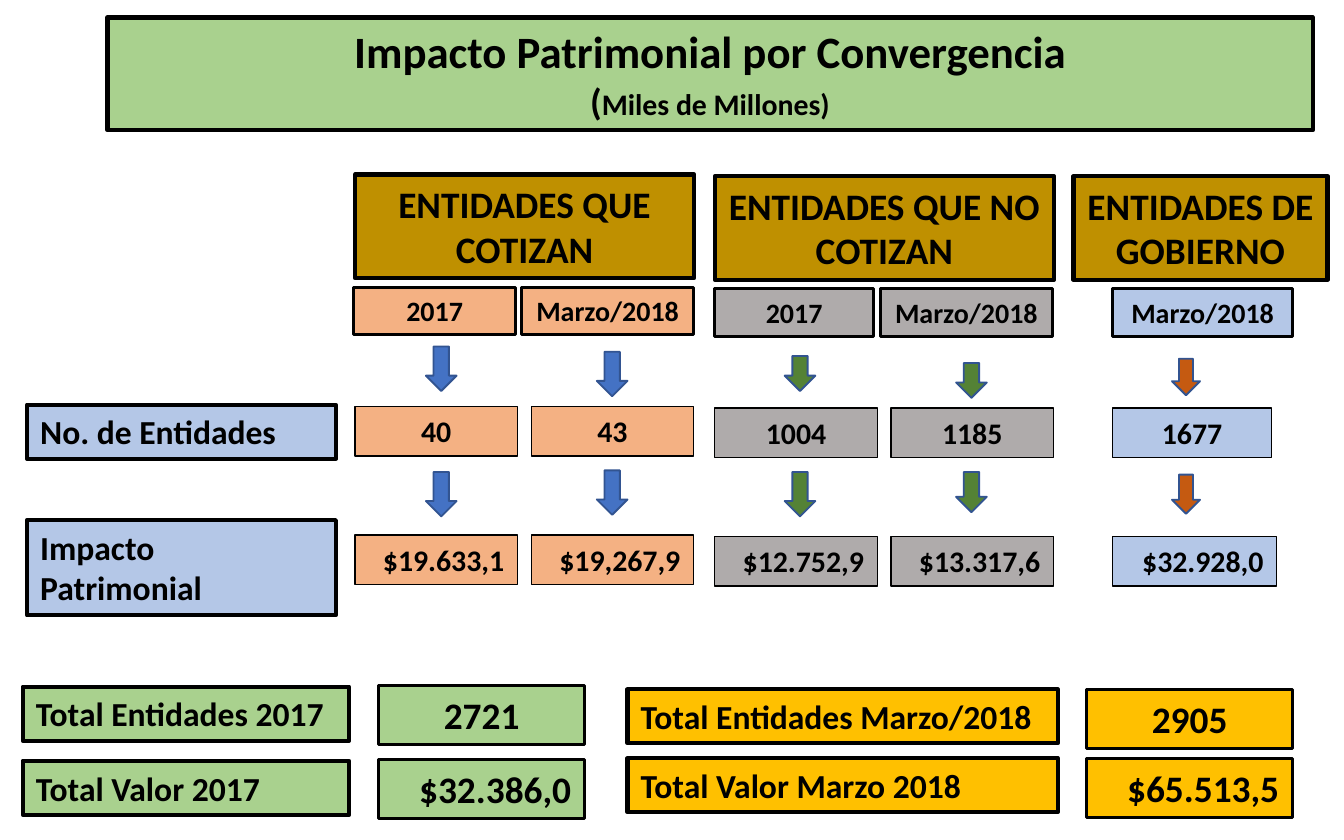
from dataclasses import dataclass

from pptx import Presentation
from pptx import util as u
from pptx.dml.color import RGBColor
from pptx.enum import shapes, text

FONT = "Calibri"
BLACK = "000000"
GREEN, BLUE, GOLD, AMBER = "A9D18E", "B4C7E7", "BF9000", "FFC000"
ORANGE, GREY = "F4B183", "AFABAB"
LEFT, CENTER, RIGHT = text.PP_ALIGN.LEFT, text.PP_ALIGN.CENTER, text.PP_ALIGN.RIGHT


@dataclass
class Column:
    year: str
    count: str
    value: str
    year_left: float
    year_width: float
    left: float
    count_width: float
    value_width: float
    arrow_left: float
    arrow_width: float
    arrows: tuple


def colour(hex_string):
    return RGBColor.from_string(hex_string)


def paint(shape, fill, line, weight):
    shape.fill.solid()
    shape.fill.fore_color.rgb = colour(fill)
    shape.line.color.rgb = colour(line)
    shape.line.width = u.Pt(weight)


def write(shape, paragraphs, align):
    frame = shape.text_frame
    frame.word_wrap = True
    frame.auto_size = text.MSO_AUTO_SIZE.SHAPE_TO_FIT_TEXT
    frame.vertical_anchor = text.MSO_ANCHOR.TOP
    for index, runs in enumerate(paragraphs):
        paragraph = frame.add_paragraph() if index else frame.paragraphs[0]
        paragraph.alignment = align
        for words, size in runs:
            run = paragraph.add_run()
            run.text = words
            run.font.name = FONT
            run.font.size = u.Pt(size)
            run.font.bold = True
            run.font.color.rgb = colour(BLACK)


def add_preset(slide, preset, box, fill, line, weight):
    shape = slide.shapes.add_shape(preset, *(u.Cm(length) for length in box))
    shape.shadow.inherit = False
    paint(shape, fill, line, weight)
    return shape


def add_box(slide, box, words, size, fill, weight, align=CENTER):
    shape = add_preset(slide, shapes.MSO_SHAPE.RECTANGLE, box, fill, BLACK, weight)
    write(shape, [[(words, size)]], align)


def add_title(slide, left, top, width, height):
    title = slide.shapes.title
    title.left, title.top = u.Cm(left), u.Cm(top)
    title.width, title.height = u.Cm(width), u.Cm(height)
    paint(title, GREEN, BLACK, 2.25)
    write(title, [[("Impacto Patrimonial por Convergencia", 24)],
                  [("(", 20), ("Miles de Millones)", 16)]], CENTER)


def add_row_labels(slide, left, top, width):
    add_box(slide, (left, top, width, 1.02), "No. de Entidades", 18, BLUE, 2.25, LEFT)
    add_box(slide, (left, top + 2.18, width, 1.8), "Impacto Patrimonial", 18, BLUE, 2.25, LEFT)


def add_group(slide, left, top, width, heading, fill, arrow_fill, columns):
    add_box(slide, (left, top, width, 1.96), heading, 20, GOLD, 2.25)
    for column in columns:
        x = left + column.left
        add_box(slide, (left + column.year_left, top + 2.13, column.year_width, 0.9),
                column.year, 15, fill, 1.5)
        add_box(slide, (x, top + 4.38, column.count_width, 0.94), column.count, 16, fill, 0.75)
        add_box(slide, (x, top + 6.81, column.value_width, 0.94),
                column.value, 16, fill, 0.75, RIGHT)
        for arrow_top, arrow_height in column.arrows:
            add_preset(slide, shapes.MSO_SHAPE.DOWN_ARROW,
                       (left + column.arrow_left, top + arrow_top,
                        column.arrow_width, arrow_height),
                       arrow_fill, "325491", 1)


def add_totals(slide, left, top, label_width, figure_left, pitch, label_drop, fill, rows):
    for index, (label, figure, align) in enumerate(rows):
        y = top + index * pitch
        add_box(slide, (left, y + label_drop, label_width, 1.02), label, 18, fill, 2.25, LEFT)
        add_box(slide, (left + figure_left, y, 3.89, 1.12), figure, 20, fill, 1.5, align)


def main():
    presentation = Presentation()
    presentation.slide_width, presentation.slide_height = u.Inches(10), u.Inches(6.25)
    slide = presentation.slides.add_slide(presentation.slide_layouts[5])

    add_title(slide, 2.03, 0.33, 22.78, 2.13)
    add_row_labels(slide, 0.51, 7.65, 5.84)

    add_group(slide, 6.71, 3.3, 6.41, "ENTIDADES QUE COTIZAN", ORANGE, "4472C4", [
        Column("2017", "40", "$19.633,1", -0.03, 3.07, 0, 3.07, 3.07,
               1.34, 0.58, ((3.25, 0.84), (5.62, 0.84))),
        Column("Marzo/2018", "43", "$19,267,9", 3.15, 3.25, 3.33, 3.07, 3.07,
               4.57, 0.58, ((3.35, 0.84), (5.59, 0.84))),
    ])
    add_group(slide, 13.51, 3.33, 6.41, "ENTIDADES QUE NO COTIZAN", GREY, "548235", [
        Column("2017", "1004", "$12.752,9", 0, 3, 0, 3.07, 3.07,
               1.32, 0.58, ((3.4, 0.66), (5.59, 0.84))),
        Column("Marzo/2018", "1185", "$13.317,6", 3.13, 3.25, 3.33, 3.07, 3.07,
               4.56, 0.58, ((3.53, 0.66), (5.59, 0.76))),
    ])
    add_group(slide, 20.29, 3.33, 4.8, "ENTIDADES DE GOBIERNO", BLUE, "C55A11", [
        Column("Marzo/2018", "1677", "$32.928,0", 0.74, 3.4, 0.74, 3, 3.1,
               1.86, 0.53, ((3.45, 0.69), (5.64, 0.74))),
    ])

    add_totals(slide, 0.43, 12.95, 6.17, 6.73, 1.4, 0.03, GREEN, [
        ("Total Entidades 2017", "2721", CENTER),
        ("Total Valor 2017", "$32.386,0", RIGHT),
    ])
    add_totals(slide, 11.86, 13.03, 8.13, 8.68, 1.3, 0, AMBER, [
        ("Total Entidades Marzo/2018", "2905", CENTER),
        ("Total Valor Marzo 2018", "$65.513,5", RIGHT),
    ])
    presentation.save("out.pptx")


if __name__ == "__main__":
    main()
